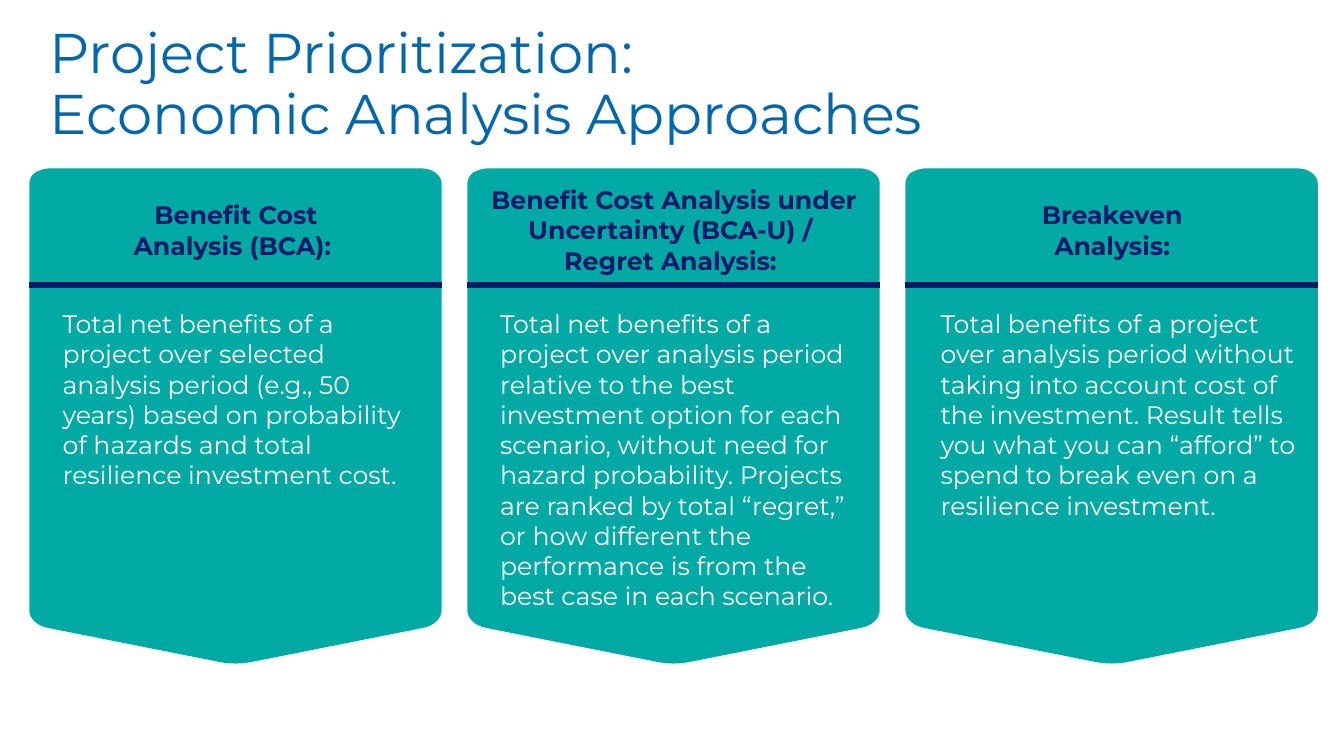
"""Build a slide comparing three economic analysis approaches for project prioritization."""
from lxml.etree import SubElement
from pptx import Presentation
from pptx.dml.color import RGBColor
from pptx.enum.shapes import MSO_CONNECTOR
from pptx.enum.text import MSO_ANCHOR, MSO_AUTO_SIZE, PP_ALIGN
from pptx.oxml.ns import qn
from pptx.util import Inches, Pt

TITLE = ["Project Prioritization:", "Economic Analysis Approaches"]
TITLE_BOX = (0.49, 0.25, 12.15, 1.21)
CARDS = [
    {
        "heading": ["Benefit Cost Analysis (BCA): "],
        "heading_box": (1.23, 1.98, 2.22, 0.61),
        "body": "Total net benefits of a project over selected analysis period (e.g., 50 years) "
                "based on probability of hazards and total resilience investment cost.",
        "body_box": (0.49, 3.06, 3.69, 1.82),
    },
    {
        "heading": ["Benefit Cost Analysis under Uncertainty (BCA-U) / ", "Regret Analysis: "],
        "heading_box": (4.73, 1.83, 3.91, 0.91),
        "body": "Total net benefits of a project over analysis period relative to the best "
                "investment option for each scenario, without need for hazard probability. "
                "Projects are ranked by total “regret,” or how different the performance is "
                "from the best case in each scenario.",
        "body_box": (4.83, 3.06, 3.71, 3.03),
    },
    {
        "heading": ["Breakeven Analysis:"],
        "heading_box": (9.92, 1.98, 2.22, 0.61),
        "body": "Total benefits of a project over analysis period without taking into account "
                "cost of the investment. Result tells you what you can “afford” to spend to "
                "break even on a resilience investment.",
        "body_box": (9.2, 3.06, 3.66, 2.12),
    },
]
FONT, BLUE, NAVY, TEAL, WHITE = "Montserrat", "0266AA", "011A6B", "00A9A3", "FFFFFF"
FIRST_LEFT, LAST_LEFT, CARD_TOP, CARD_WIDTH = 0.29, 8.98, 1.67, 4.09
RULE_TOP = 2.83
OUTLINE_START = (4.09, 0.15)
OUTLINE = [
    [(4.09, 4.38)],
    [(4.09, 4.47), (4.01, 4.54), (3.9, 4.56)],
    [(2.24, 4.89)],
    [(2.11, 4.92), (1.98, 4.92), (1.85, 4.89)],
    [(0.19, 4.56)],
    [(0.08, 4.54), (0, 4.47), (0, 4.38)],
    [(0, 0.15)],
    [(0, 0.11), (0.02, 0.07), (0.06, 0.04)],
    [(0.1, 0.02), (0.15, 0), (0.2, 0)],
    [(3.89, 0)],
    [(4, 0), (4.09, 0.07), (4.09, 0.15)],
]


def color(value):
    return RGBColor.from_string(value)


def write_text(shape, lines, size=18, fill=WHITE, bold=False, align=PP_ALIGN.LEFT,
               spacing=1.0, level=0, indent=0):
    frame = shape.text_frame
    frame.word_wrap = True
    frame.auto_size = MSO_AUTO_SIZE.SHAPE_TO_FIT_TEXT
    frame.vertical_anchor = MSO_ANCHOR.TOP
    frame.margin_left = frame.margin_right = frame.margin_top = frame.margin_bottom = 0
    frame.text = "\n".join(lines)
    for paragraph in frame.paragraphs:
        paragraph.alignment = align
        paragraph.line_spacing = spacing
        paragraph.space_before = Pt(0)
        paragraph.level = level
        properties = paragraph._p.get_or_add_pPr()
        properties.set("marL", str(Inches(indent)))
        properties.set("indent", "0")
        for run in paragraph.runs:
            run.font.name = FONT
            run.font.size = Pt(size)
            run.font.bold = bold
            run.font.color.rgb = color(fill)


def add_panel(shapes, left):
    def place(point):
        return Inches(left + point[0]), Inches(CARD_TOP + point[1])

    builder = shapes.build_freeform(*place(OUTLINE_START))
    builder.add_line_segments([place(point) for segment in OUTLINE for point in segment],
                              close=True)
    panel = builder.convert_to_shape()
    lines = iter(list(panel._element.iter(qn("a:lnTo"))))
    for segment in OUTLINE:
        first, *others = [next(lines) for _ in segment]
        if others:
            first.tag = qn("a:cubicBezTo")
            for line in others:
                first.append(line[0])
                line.getparent().remove(line)
    panel.shadow.inherit = False
    panel.fill.solid()
    panel.fill.fore_color.rgb = color(TEAL)
    panel.line.fill.background()


def add_rule(shapes, left):
    rule = shapes.add_connector(MSO_CONNECTOR.STRAIGHT, Inches(left), Inches(RULE_TOP),
                                Inches(left + CARD_WIDTH), Inches(RULE_TOP))
    rule.line.color.rgb = color(NAVY)
    rule.line.width = Pt(4.5)
    SubElement(rule._element.spPr, qn("a:effectLst"))


def add_card(slide, left, card):
    shapes = slide.shapes.add_group_shape().shapes
    add_panel(shapes, left)
    add_rule(shapes, left)
    heading = shapes.add_textbox(*map(Inches, card["heading_box"]))
    write_text(heading, card["heading"], fill=NAVY, bold=True, align=PP_ALIGN.CENTER)
    body = shapes.add_textbox(*map(Inches, card["body_box"]))
    write_text(body, [card["body"]], level=1, indent=0.13)


def main():
    presentation = Presentation()
    presentation.slide_width, presentation.slide_height = Inches(13.33), Inches(7.5)
    slide = presentation.slides.add_slide(presentation.slide_layouts[5])
    title = slide.shapes.title
    title.left, title.top, title.width, title.height = map(Inches, TITLE_BOX)
    write_text(title, TITLE, size=40, fill=BLUE, spacing=0.9)
    pitch = (LAST_LEFT - FIRST_LEFT) / (len(CARDS) - 1)
    for index, card in enumerate(CARDS):
        add_card(slide, FIRST_LEFT + index * pitch, card)
    presentation.save("out.pptx")


if __name__ == "__main__":
    main()
